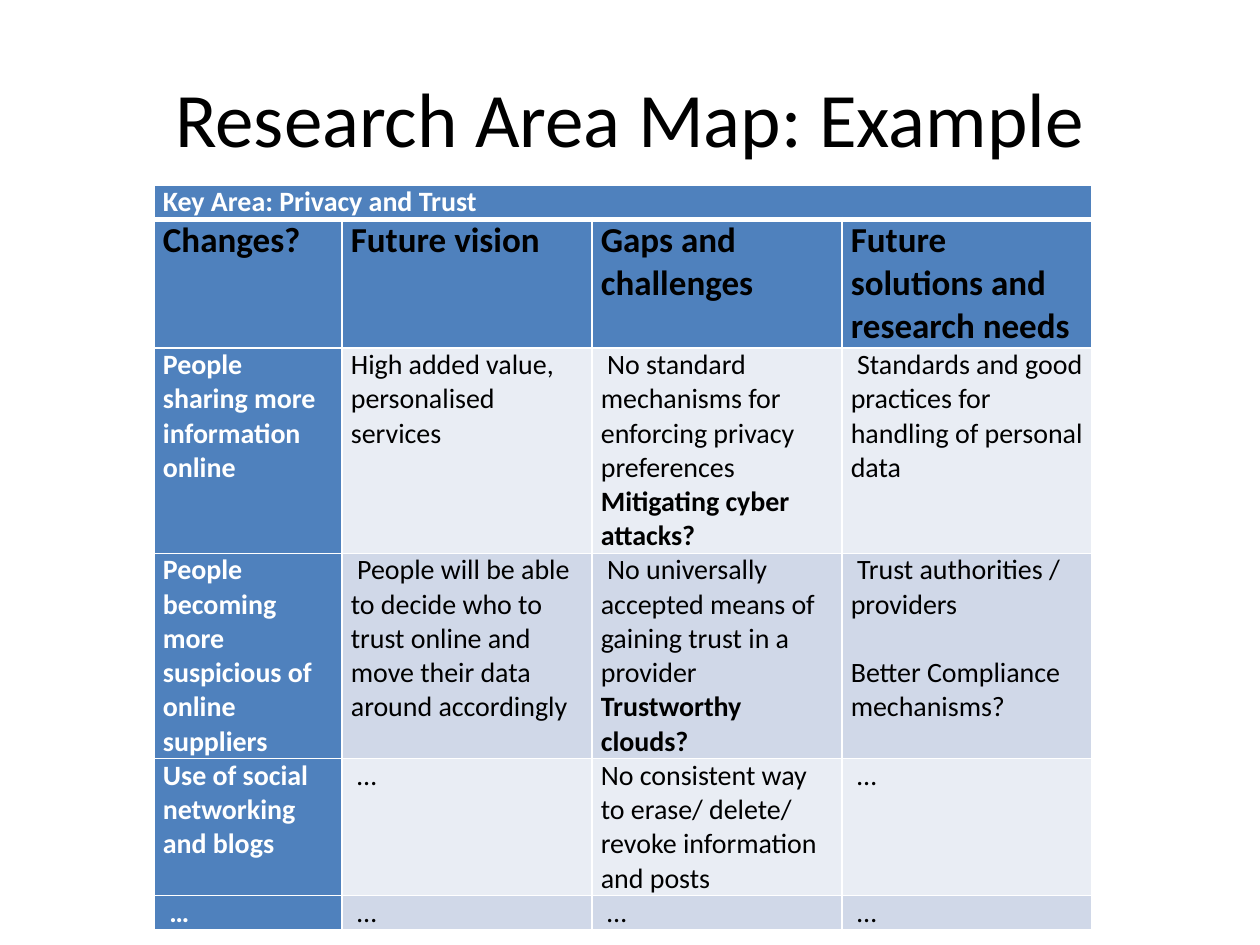
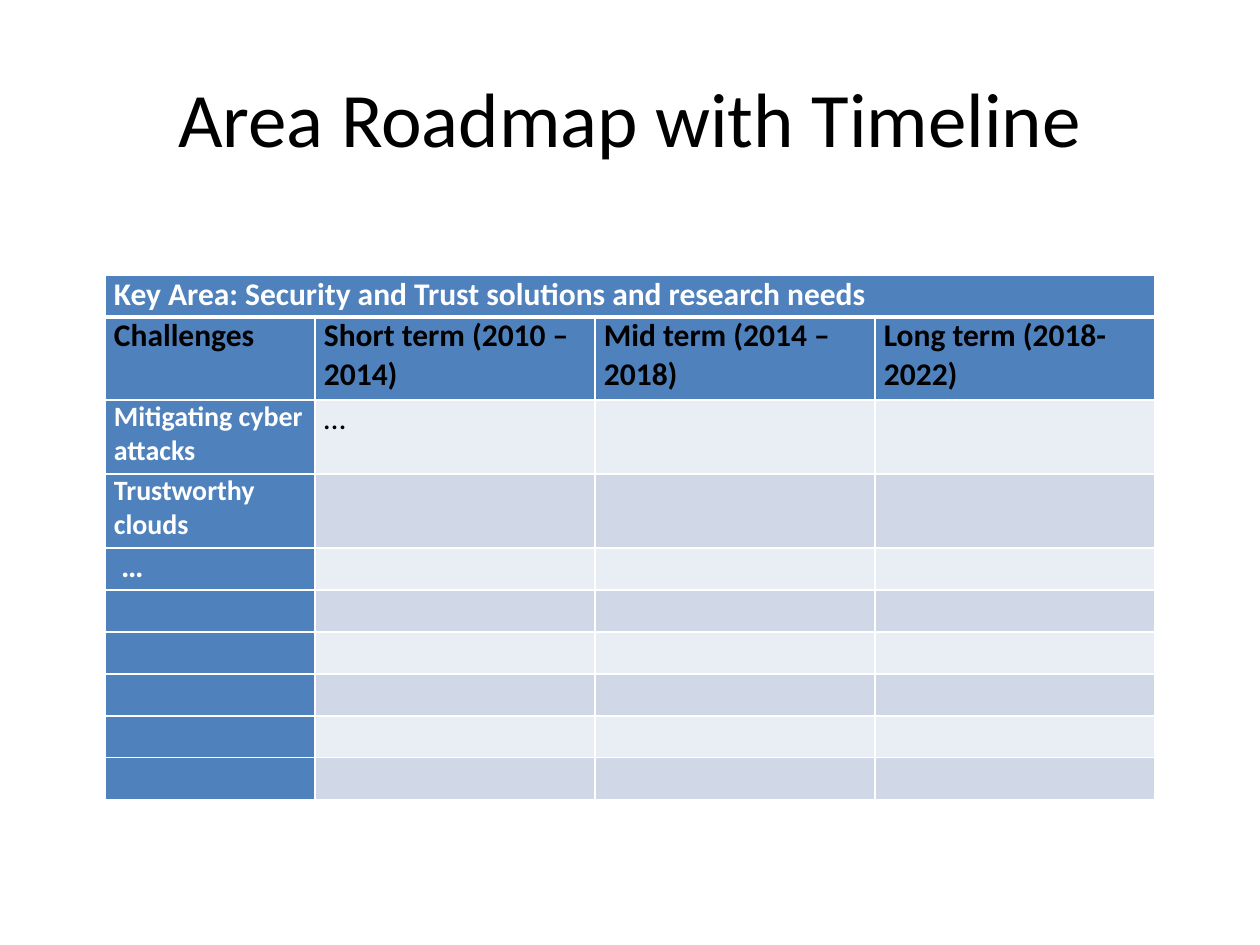
from lxml import etree
from pptx import Presentation
from pptx import util as u
from pptx.dml.color import RGBColor
from pptx.enum import text
from pptx.oxml.ns import qn

PX = 914400 / 126
FONT = "Calibri"
COLORS = {
    "white": "FFFFFF",
    "black": "000000",
    "header": "4F81BD",
    "light": "E9EDF4",
    "dark": "D0D8E8",
}


def px(length):
    return u.Emu(round(length * PX))


def style_text(para, size, color, bold=False):
    for span in para.runs:
        span.font.name = FONT
        span.font.size = u.Pt(size)
        span.font.bold = bold
        span.font.color.rgb = RGBColor.from_string(COLORS[color])


# Content of the two pages; line breaks separate paragraphs
pages = [
    {
        "title": "Research Area Map: Example",
        "at": (154, 185),
        "columns": [188] + [250] * 3,
        "heights": [34, 128, 205, 205, 137, 34],
        "sizes": {"area": 16, "heading": 20, "label": 16, "body": 16},
        "rows": [
            ["Key Area: Privacy and Trust"],
            ["Changes?", "Future vision", "Gaps and challenges",
             "Future solutions and research needs"],
            ["People sharing more information online",
             "High added value, personalised services",
             " No standard mechanisms for enforcing privacy preferences\n"
             "Mitigating cyber attacks?",
             " Standards and good practices for handling of personal data"],
            ["People becoming more suspicious of online suppliers",
             " People will be able to decide who to trust online and move "
             "their data around accordingly",
             " No universally accepted means of gaining trust in a provider\n"
             "Trustworthy clouds?",
             " Trust authorities / providers\nBetter Compliance mechanisms?"],
            ["Use of social networking and blogs", " …",
             "No consistent way to erase/ delete/ revoke information and posts ",
             " …"],
            [" …"] * 4,
        ],
    },
    {
        "title": "Area Roadmap with Timeline",
        "at": (105, 275),
        "columns": [210] + [280] * 3,
        "heights": [42, 83, 74, 74] + [42] * 6,
        "sizes": {"area": 18, "heading": 18, "label": 16, "body": 18},
        "rows": [
            ["Key Area: Security and Trust solutions and research needs"],
            ["Challenges", "Short term (2010 – 2014)",
             "Mid term (2014 – 2018)", "Long term (2018-2022)"],
            ["Mitigating cyber attacks", "…"],
            ["Trustworthy clouds"],
            [" …"],
        ],
    },
]

deck = Presentation()
deck.slide_width, deck.slide_height = px(1260), px(945)

for content in pages:
    page = deck.slides.add_slide(deck.slide_layouts[5])

    # Title
    title = page.shapes.title
    title.left, title.top, title.width, title.height = map(px, (63, 38, 1134, 158))
    title.text_frame.text = content["title"]
    title.text_frame.vertical_anchor = text.MSO_ANCHOR.MIDDLE
    title.text_frame.paragraphs[0].alignment = text.PP_ALIGN.CENTER
    style_text(title.text_frame.paragraphs[0], 44, "black")

    # Table grid
    columns, heights = content["columns"], content["heights"]
    left, top = content["at"]
    table = page.shapes.add_table(
        len(heights), len(columns), px(left), px(top),
        px(sum(columns)), px(sum(heights))).table
    for column, width in zip(table.columns, columns):
        column.width = px(width)
    for row, height in zip(table.rows, heights):
        row.height = px(height)
    table.cell(0, 0).merge(table.cell(0, len(columns) - 1))

    for r in range(len(heights)):
        words = content["rows"][r] if r < len(content["rows"]) else []
        for c in range(len(columns)):
            cell = table.cell(r, c)
            cell.margin_left = cell.margin_right = px(9)
            cell.margin_top = cell.margin_bottom = 0

            # White borders, heavier below the key area
            properties = cell._tc.get_or_add_tcPr()
            for side in "LRTB":
                heavy = (r, side) in [(0, "B"), (1, "T")]
                line = etree.SubElement(properties, qn(f"a:ln{side}"),
                                        w=str(u.Pt(3 if heavy else 1)))
                fill = etree.SubElement(line, qn("a:solidFill"))
                etree.SubElement(fill, qn("a:srgbClr"), val=COLORS["white"])

            # Blue heading rows and label column, banded body
            banded = "light" if r % 2 == 0 else "dark"
            shade = "header" if r < 2 or c == 0 else banded
            cell.fill.solid()
            cell.fill.fore_color.rgb = RGBColor.from_string(COLORS[shade])

            if c >= len(words):
                continue
            cell.text_frame.text = words[c]
            if r < 2:
                role = ("area", "heading")[r]
            else:
                role = "label" if c == 0 and "…" not in words[c] else "body"
            color = "white" if r == 0 or (c == 0 and r > 1) else "black"
            for i, para in enumerate(cell.text_frame.paragraphs):
                open_question = i > 0 and c == 2
                style_text(para, content["sizes"][role], color,
                           shade == "header" or open_question)
                if i > 0 and c == 3:
                    para.space_before = u.Pt(19.5)

deck.save("out.pptx")
